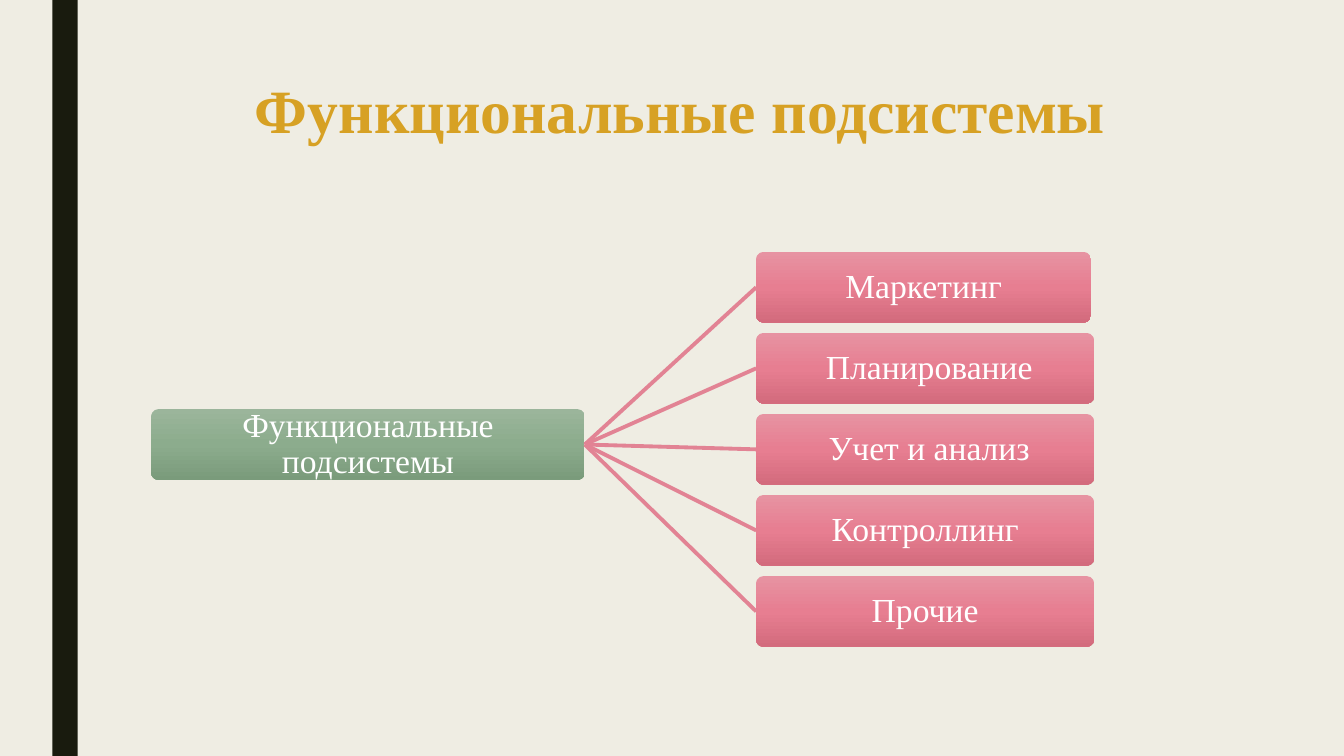
"""Build a slide with a tree of functional subsystems."""
from copy import deepcopy

from pptx import Presentation
from pptx.dml.color import RGBColor
from pptx.enum import shapes, text
from pptx.oxml.ns import qn
from pptx.util import Inches, Pt

TITLE = "Функциональные подсистемы"
ROOT = "Функциональные подсистемы"
BRANCHES = [
    ("Маркетинг", 3.32),
    (" Планирование", 3.35),
    (" Учет и анализ", 3.35),
    ("Контроллинг", 3.35),
    ("Прочие", 3.35),
]
COLORS = {
    "background": "EFEDE3",
    "bar": "191B0E",
    "title": "D7A124",
    "label": "FFFFFF",
    "link": "E28394",
}
GRADIENTS = {
    "root": ("9BB59B", "8CAC8D", "7A9B7B"),
    "branch": ("E793A2", "E77E91", "D36B7D"),
}
FONT = "Times New Roman"
ROOT_LEFT, ROOT_TOP, ROOT_WIDTH = 1.5, 4.06, 4.3
BRANCH_LEFT, BRANCH_TOP, BRANCH_STEP = 7.5, 2.5, 0.804
NODE_HEIGHT = 0.7


def rgb(name):
    return RGBColor.from_string(COLORS[name])


def write(frame, words, size, color, spacing, bold=False):
    frame.word_wrap = True
    paragraph = frame.paragraphs[0]
    paragraph.alignment = text.PP_ALIGN.CENTER
    paragraph.line_spacing = spacing
    run = paragraph.add_run()
    run.text = words
    run.font.name = FONT
    run.font.size = Pt(size)
    run.font.bold = bold
    run.font.color.rgb = rgb(color)


def fill_gradient(shape, colors):
    shape.fill.gradient()
    shape.fill.gradient_angle = 270
    stop_list = shape.element.spPr.find(qn("a:gradFill")).find(qn("a:gsLst"))
    stop_list.insert(1, deepcopy(stop_list[0]))
    for index, (stop, color) in enumerate(zip(shape.fill.gradient_stops, colors)):
        stop.position = index / 2
        stop.color.rgb = RGBColor.from_string(color)


def add_node(slide, words, left, top, width, gradient):
    node = slide.shapes.add_shape(
        shapes.MSO_SHAPE.ROUNDED_RECTANGLE,
        Inches(left), Inches(top), Inches(width), Inches(NODE_HEIGHT))
    node.adjustments[0] = 0.1
    node.shadow.inherit = False
    node.line.fill.background()
    fill_gradient(node, GRADIENTS[gradient])
    frame = node.text_frame
    frame.margin_left = frame.margin_right = Inches(0.02)
    frame.margin_top = frame.margin_bottom = Inches(0.02)
    frame.vertical_anchor = text.MSO_ANCHOR.MIDDLE
    write(frame, words, 24, "label", 0.9)
    return node


def add_link(slide, root, branch):
    link = slide.shapes.add_connector(shapes.MSO_CONNECTOR.STRAIGHT, 0, 0, 0, 0)
    link.begin_connect(root, 3)
    link.end_connect(branch, 1)
    link.line.color.rgb = rgb("link")
    link.line.width = Pt(2.75)
    properties = link.element.spPr
    properties.append(properties.makeelement(qn("a:effectLst"), {}))


def main():
    presentation = Presentation()
    presentation.slide_width = Inches(13.33)
    presentation.slide_height = Inches(7.5)
    slide = presentation.slides.add_slide(presentation.slide_layouts[6])
    slide.background.fill.solid()
    slide.background.fill.fore_color.rgb = rgb("background")

    bar = slide.shapes.add_shape(
        shapes.MSO_SHAPE.RECTANGLE, Inches(0.52), 0, Inches(0.25), Inches(7.5))
    bar.shadow.inherit = False
    bar.fill.solid()
    bar.fill.fore_color.rgb = rgb("bar")
    bar.line.fill.background()

    title = slide.shapes.add_textbox(
        Inches(1.5), Inches(0.75), Inches(10.5), Inches(1.62))
    write(title.text_frame, TITLE, 44, "title", 0.89, bold=True)

    root = add_node(slide, ROOT, ROOT_LEFT, ROOT_TOP, ROOT_WIDTH, "root")
    for row, (words, width) in enumerate(BRANCHES):
        top = BRANCH_TOP + row * BRANCH_STEP
        branch = add_node(slide, words, BRANCH_LEFT, top, width, "branch")
        add_link(slide, root, branch)

    presentation.save("out.pptx")


if __name__ == "__main__":
    main()
